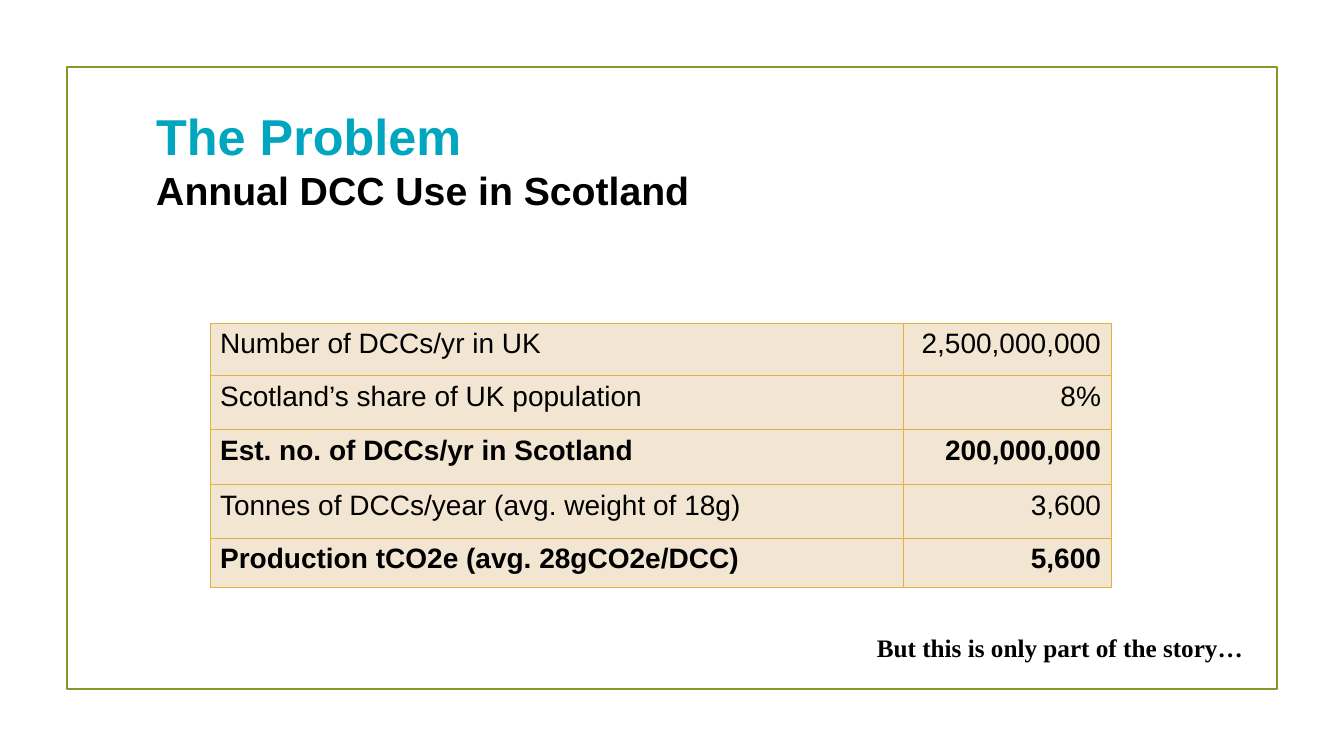
"""Build the slide on annual DCC use in Scotland."""
from dataclasses import dataclass
from typing import Any

from lxml import etree
from pptx import Presentation
from pptx.dml.color import RGBColor
from pptx.enum.shapes import MSO_SHAPE
from pptx.enum.text import MSO_ANCHOR, MSO_AUTO_SIZE, PP_ALIGN
from pptx.oxml.ns import qn
from pptx.util import Emu, Inches, Pt

RECTANGLE = MSO_SHAPE.RECTANGLE
TOP, MIDDLE = MSO_ANCHOR.TOP, MSO_ANCHOR.MIDDLE
NO_AUTOFIT = MSO_AUTO_SIZE.NONE
LEFT, RIGHT = PP_ALIGN.LEFT, PP_ALIGN.RIGHT
TITLE_ONLY = 5
SLIDE_WIDTH, SLIDE_HEIGHT = Inches(13.33), Inches(7.5)
GRID_COLUMNS, GRID_ROWS = 40, 22.5


@dataclass(frozen=True)
class Style:
    """Font, size, colour and weight of a paragraph."""
    font: str
    size: float
    color: str
    bold: bool = False


@dataclass(frozen=True)
class Theme:
    """Colours, line widths and text styles of the slide."""
    frame: str = "83992A"
    frame_width: float = 1.25
    border: str = "DEB340"
    border_width: float = 0.75
    cell: str = "F2E6D2"
    heading: Style = Style("Arial", 36, "00A6BF", True)
    subheading: Style = Style("Arial", 28, "000000", True)
    body: Style = Style("Arial", 20, "000000")
    total: Style = Style("Arial", 20, "000000", True)
    remark: Style = Style("Times New Roman", 18, "000000", True)


@dataclass(frozen=True)
class Area:
    """A rectangle in grid columns and rows."""
    column: float
    row: float
    columns: float
    rows: float

    def lengths(self) -> tuple[Emu, Emu, Emu, Emu]:
        """Return left, top, width and height."""
        return across(self.column), down(self.row), across(self.columns), down(self.rows)


@dataclass(frozen=True)
class Line:
    """One paragraph of text with its style."""
    text: str
    style: Style
    align: Any = LEFT


@dataclass(frozen=True)
class Figure:
    """One row of the table."""
    label: str
    value: str
    rows: float
    is_total: bool = False


THEME = Theme()
FRAME_AREA = Area(2, 2, 36, 18.5)
TITLE_AREA = Area(4.35, 3.87, 27, 1.74)
TABLE_AREA = Area(6.25, 9.63, 26.82, 7.86)
REMARK_AREA = Area(10.56, 18.66, 26.73, 1.2)
TABLE_COLUMNS = (20.64, 6.18)
FIGURES = (
    Figure("Number of DCCs/yr in UK", "2,500,000,000", 1.55),
    Figure("Scotland’s share of UK population", "8%", 1.61),
    Figure("Est. no. of DCCs/yr in Scotland", "200,000,000", 1.64, True),
    Figure("Tonnes of DCCs/year (avg. weight of 18g)", "3,600", 1.6),
    Figure("Production tCO2e (avg. 28gCO2e/DCC)", "5,600", 1.46, True),
)


def across(columns: float) -> Emu:
    """Turn grid columns into a length."""
    return Emu(round(SLIDE_WIDTH * columns / GRID_COLUMNS))


def down(rows: float) -> Emu:
    """Turn grid rows into a length."""
    return Emu(round(SLIDE_HEIGHT * rows / GRID_ROWS))


def write(frame: Any, lines: list[Line], anchor: Any = TOP) -> None:
    """Fill a text frame with styled paragraphs."""
    frame.word_wrap = True
    frame.vertical_anchor = anchor
    for index, line in enumerate(lines):
        para = frame.add_paragraph() if index else frame.paragraphs[0]
        para.text = line.text
        para.alignment = line.align
        para.font.name = line.style.font
        para.font.size = Pt(line.style.size)
        para.font.bold = line.style.bold
        para.font.color.rgb = RGBColor.from_string(line.style.color)


def draw_frame(page: Any) -> None:
    """Draw the outline around the slide's content."""
    box = page.shapes.add_shape(RECTANGLE, *FRAME_AREA.lengths())
    box.shadow.inherit = False
    box.fill.background()
    box.line.color.rgb = RGBColor.from_string(THEME.frame)
    box.line.width = Pt(THEME.frame_width)


def draw_title(page: Any) -> None:
    """Place the heading and subheading in the title placeholder."""
    title = page.shapes.title
    title.left, title.top, title.width, title.height = TITLE_AREA.lengths()
    write(title.text_frame, [
        Line("The Problem", THEME.heading),
        Line("Annual DCC Use in Scotland", THEME.subheading),
    ], MIDDLE)
    title.text_frame.auto_size = NO_AUTOFIT


def format_cell(cell: Any, line: Line) -> None:
    """Write a table cell and give it borders and a fill."""
    write(cell.text_frame, [line])
    properties = cell._tc.get_or_add_tcPr()
    for side in ("a:lnL", "a:lnR", "a:lnT", "a:lnB"):
        border = etree.SubElement(properties, qn(side), w=str(Pt(THEME.border_width)))
        fill = etree.SubElement(border, qn("a:solidFill"))
        etree.SubElement(fill, qn("a:srgbClr"), val=THEME.border)
    cell.fill.solid()
    cell.fill.fore_color.rgb = RGBColor.from_string(THEME.cell)


def draw_table(page: Any) -> None:
    """Draw the table of figures."""
    table = page.shapes.add_table(
        len(FIGURES), len(TABLE_COLUMNS), *TABLE_AREA.lengths()).table
    table.first_row = table.horz_banding = False
    for column, columns in zip(table.columns, TABLE_COLUMNS):
        column.width = across(columns)
    for row, figure in zip(table.rows, FIGURES):
        row.height = down(figure.rows)
        style = THEME.total if figure.is_total else THEME.body
        label, value = row.cells
        format_cell(label, Line(figure.label, style))
        format_cell(value, Line(figure.value, style, RIGHT))


def draw_remark(page: Any) -> None:
    """Place the closing remark below the table."""
    box = page.shapes.add_textbox(*REMARK_AREA.lengths())
    write(box.text_frame, [
        Line("But this is only part of the story…", THEME.remark, RIGHT)])


def main() -> None:
    """Build and save the deck."""
    deck = Presentation()
    deck.slide_width, deck.slide_height = SLIDE_WIDTH, SLIDE_HEIGHT
    page = deck.slides.add_slide(deck.slide_layouts[TITLE_ONLY])
    draw_frame(page)
    draw_table(page)
    draw_title(page)
    draw_remark(page)
    deck.save("out.pptx")


if __name__ == "__main__":
    main()
